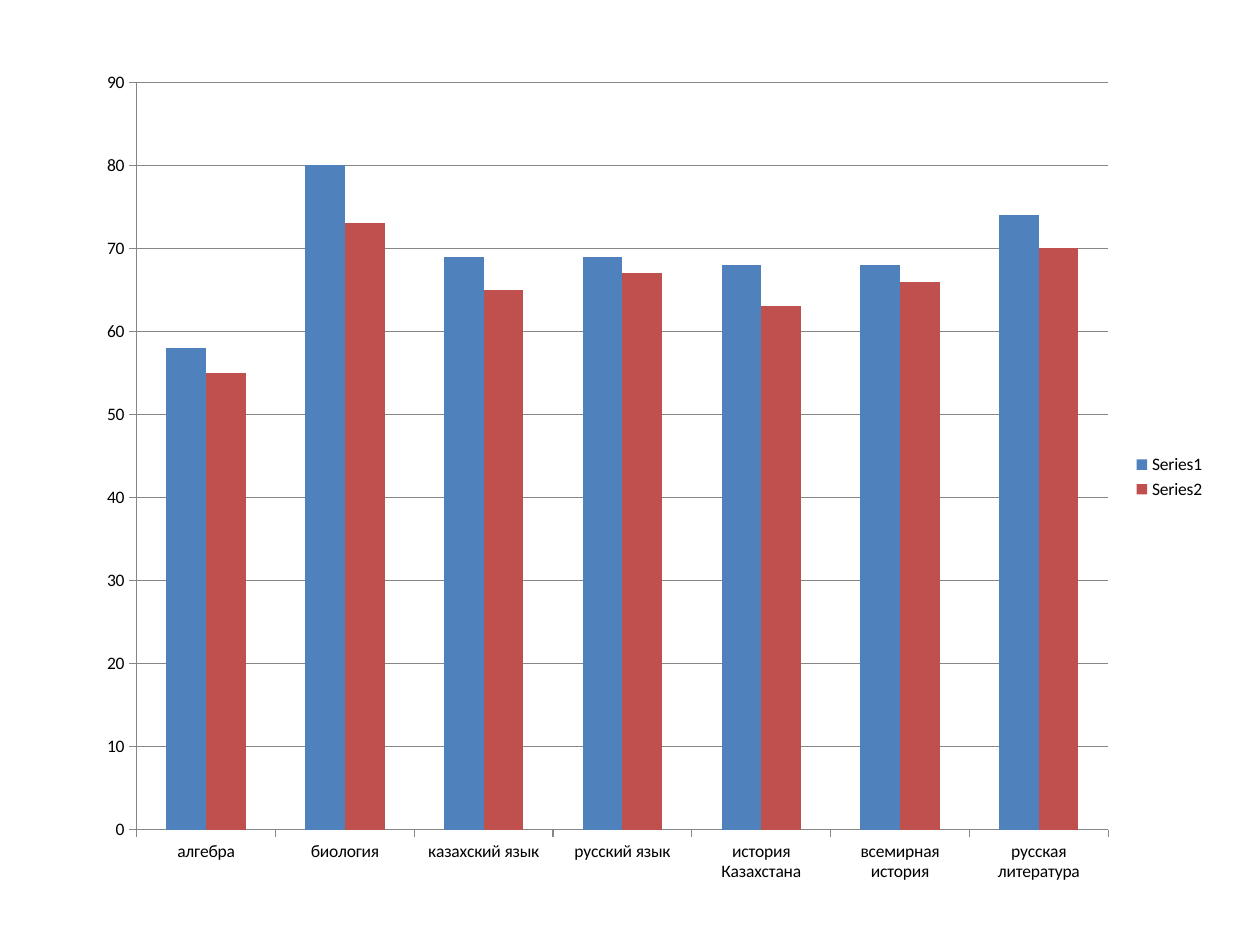
from pptx import Presentation
from pptx.chart.data import CategoryChartData
from pptx.dml.color import RGBColor
from pptx.enum.chart import XL_CHART_TYPE as ChartType
from pptx.enum.chart import XL_LEGEND_POSITION as LegendPosition
from pptx.enum.chart import XL_TICK_MARK as TickMark
from pptx.util import Cm, Pt

COLORS = {"Series1": "4F81BD", "Series2": "C0504D", "text": "000000", "line": "868686"}
SCORES = {
    "алгебра": (58, 55),
    "биология": (80, 73),
    "казахский язык": (69, 65),
    "русский язык": (69, 67),
    "история Казахстана": (68, 63),
    "всемирная история": (68, 66),
    "русская литература": (74, 70),
}

deck = Presentation()
deck.slide_width, deck.slide_height = Cm(25.4), Cm(19.05)
page = deck.slides.add_slide(deck.slide_layouts[6])

data = CategoryChartData()
data.categories = list(SCORES)
for name, values in zip(("Series1", "Series2"), zip(*SCORES.values())):
    data.add_series(name, values)

chart = page.shapes.add_chart(
    ChartType.COLUMN_CLUSTERED, Cm(1.7), Cm(1.12), Cm(22.86), Cm(16.99), data
).chart
chart.has_title = False
chart.font.name = "Calibri"
chart.font.size = Pt(10)
chart.font.color.rgb = RGBColor.from_string(COLORS["text"])

plot = chart.plots[0]
plot.gap_width = 150
plot.overlap = 0
plot.vary_by_categories = False
for series in plot.series:
    series.format.fill.solid()
    series.format.fill.fore_color.rgb = RGBColor.from_string(COLORS[series.name])

scale = chart.value_axis
scale.minimum_scale, scale.maximum_scale, scale.major_unit = 0, 90, 10
scale.has_major_gridlines = True
for axis in (chart.category_axis, scale):
    axis.major_tick_mark = TickMark.OUTSIDE
    axis.minor_tick_mark = TickMark.NONE
for part in (chart.category_axis, scale, scale.major_gridlines):
    part.format.line.width = Pt(0.75)
    part.format.line.color.rgb = RGBColor.from_string(COLORS["line"])

chart.has_legend = True
chart.legend.position = LegendPosition.RIGHT
chart.legend.include_in_layout = False

deck.save("out.pptx")
